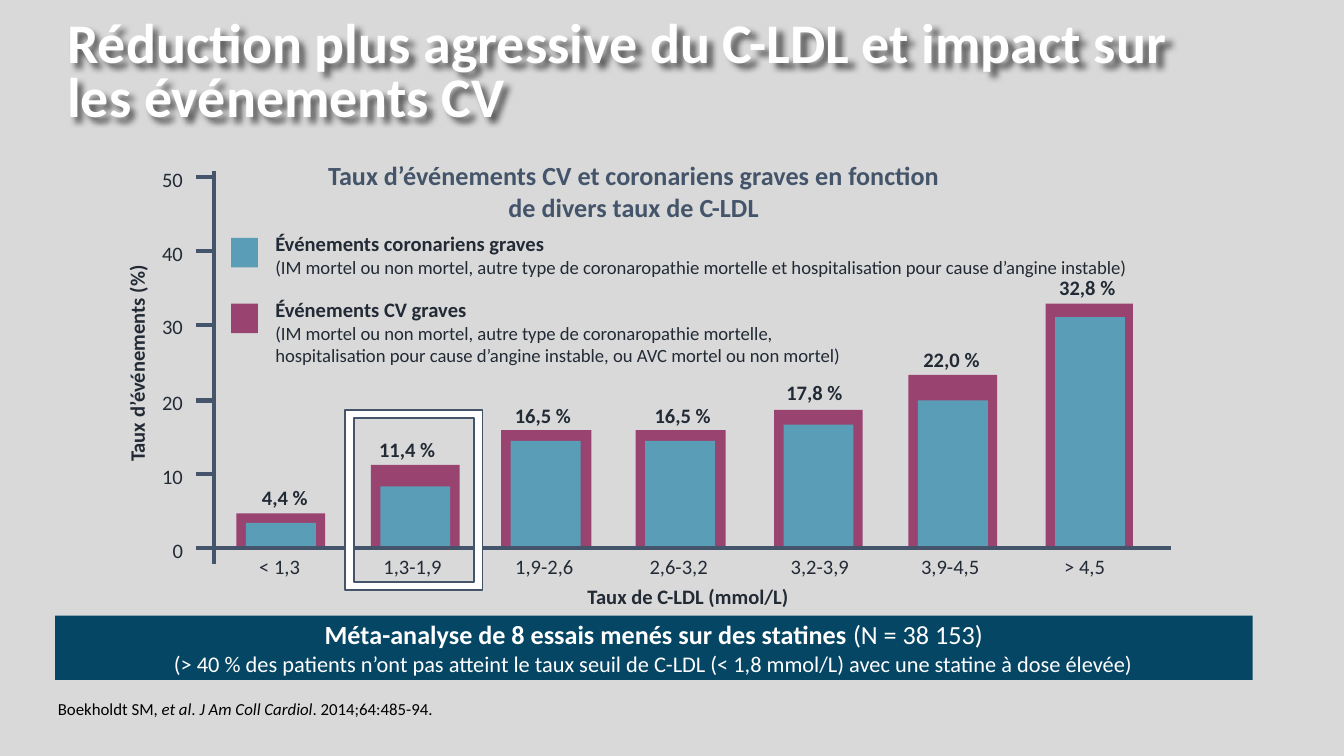
from dataclasses import dataclass

from lxml import etree
from pptx import Presentation, util as u
from pptx.dml.color import RGBColor
from pptx.enum import shapes as es, text as et
from pptx.oxml.ns import qn

PX = 9144  # 100 px to the inch
WIDE = 1000 * PX
TALL = WIDE * 9 // 16
HUE = {
    "back": "D9D9D9", "white": "FFFFFF", "black": "000000", "ink": "222A35",
    "slate": "44546A", "navy": "064665", "plum": "994371", "teal": "5A9DB6",
}
LEFT, MID, RIGHT = et.PP_ALIGN.LEFT, et.PP_ALIGN.CENTER, et.PP_ALIGN.RIGHT
BASE = 408  # y of the zero line
ROW = 29  # height of a one-line label


@dataclass
class Run:
    text: str
    size: int = 11
    bold: bool = False
    italic: bool = False
    hue: str = "ink"


@dataclass
class Bar:
    """One C-LDL class: its bars, value label and axis label."""
    x: int
    wide: int
    tall: int
    inner: int
    value: str
    mid: int
    top: int
    group: str
    center: int


@dataclass
class Key:
    y: int
    wide: int
    tall: int
    hue: str
    name: str
    note: str


BARS = [
    Bar(176, 66, 26, 19, "4,4 %", 212, 356, "< 1,3", 208),
    Bar(276, 66, 62, 46, "11,4 %", 303, 320, "1,3-1,9", 307),
    Bar(373, 67, 88, 80, "16,5 %", 404, 295, "1,9-2,6", 405),
    Bar(473, 67, 88, 80, "16,5 %", 508, 295, "2,6-3,2", 505),
    Bar(576, 66, 103, 92, "17,8 %", 606, 278, "3,2-3,9", 610),
    Bar(676, 66, 129, 110, "22,0 %", 708, 253, "3,9-4,5", 707),
    Bar(778, 65, 182, 172, "32,8 %", 809, 200, "> 4,5", 807),
]
KEYS = [
    Key(216, 452, 62, "plum", "Événements CV graves",
        "(IM mortel ou non mortel, autre type de coronaropathie mortelle, "
        "hospitalisation pour cause d’angine instable, ou AVC mortel ou non mortel)"),
    Key(167, 677, 45, "teal", "Événements coronariens graves",
        "(IM mortel ou non mortel, autre type de coronaropathie mortelle et "
        "hospitalisation pour cause d’angine instable)"),
]


def paint(name: str) -> RGBColor:
    return RGBColor.from_string(HUE[name])


def apply(item, form: dict) -> None:
    for name, value in form.items():
        setattr(item, name, value)


def place(shape, x: int, y: int, w: int, h: int) -> None:
    apply(shape, {"left": x * PX, "top": y * PX, "width": w * PX, "height": h * PX})


def effects(shape):
    """Give the shape its own, empty effect list."""
    return etree.SubElement(shape._element.spPr, qn("a:effectLst"))


def write(shape, paras: list[list[Run]], align=LEFT, space: float = 1.0, **form) -> None:
    frame = shape.text_frame
    apply(frame, {"word_wrap": True, **form})
    for n, runs in enumerate(paras):
        para = frame.add_paragraph() if n else frame.paragraphs[0]
        apply(para, {"alignment": align, "line_spacing": space, "space_before": u.Pt(0)})
        for run in runs:
            part = para.add_run()
            part.text = run.text
            apply(part.font, {"name": "Calibri", "size": u.Pt(run.size),
                              "bold": run.bold, "italic": run.italic})
            part.font.color.rgb = paint(run.hue)


def label(slide, x: int, y: int, w: int, h: int, paras: list[list[Run]],
          align=MID, **form):
    box = slide.shapes.add_textbox(x * PX, y * PX, w * PX, h * PX)
    write(box, paras, align, **{"auto_size": et.MSO_AUTO_SIZE.SHAPE_TO_FIT_TEXT, **form})
    return box


def block(slide, x: int, y: int, w: int, h: int, hue: str,
          kind=es.MSO_SHAPE.RECTANGLE):
    shape = slide.shapes.add_shape(kind, x * PX, y * PX, w * PX, h * PX)
    shape.shadow.inherit = False
    shape.fill.solid()
    shape.fill.fore_color.rgb = paint(hue)
    shape.line.fill.background()
    return shape


def rule(slide, x: int, y: int, to_x: int, to_y: int) -> None:
    line = slide.shapes.add_connector(
        es.MSO_CONNECTOR.STRAIGHT, x * PX, y * PX, to_x * PX, to_y * PX)
    line.line.color.rgb = paint("slate")
    line.line.width = u.Pt(2.25)
    effects(line)


def head(slide) -> None:
    title = slide.shapes.title
    place(title, 49, 24, 872, 63)
    write(title, [[Run("Réduction plus agressive du C-LDL et impact sur les événements CV",
                       30, True, hue="white")]],
          space=0.8, margin_left=PX, margin_right=0,
          vertical_anchor=et.MSO_ANCHOR.MIDDLE, auto_size=et.MSO_AUTO_SIZE.NONE)
    shade = etree.SubElement(effects(title), qn("a:outerShdw"), blurRad="38100",
                             dist="38100", dir="2700000", algn="tl", rotWithShape="0")
    tone = etree.SubElement(shade, qn("a:srgbClr"), val=HUE["black"])
    etree.SubElement(tone, qn("a:alpha"), val="60000")


def foot(slide) -> None:
    cite = [Run("Boekholdt SM, "), Run("et al", italic=True), Run(". "),
            Run("J Am Coll Cardiol", italic=True), Run(". 2014;64:485-94.")]
    for run in cite:
        apply(run, {"size": 9, "hue": "black"})
    label(slide, 43, 514, 351, 29, [cite], LEFT, space=0.9, margin_left=0, margin_right=0,
          vertical_anchor=et.MSO_ANCHOR.MIDDLE, auto_size=et.MSO_AUTO_SIZE.NONE)

    band = block(slide, 41, 458, 891, 48, "navy")
    edges = {f"margin_{side}": 2 * PX for side in ("left", "right", "top", "bottom")}
    write(band, [
        [Run("Méta-analyse de 8 essais menés sur des statines ", 14, True, hue="white"),
         Run("(N = 38 153)", 14, hue="white")],
        [Run("(> 40 % des patients n’ont pas atteint le taux seuil de C-LDL "
             "(< 1,8 mmol/L) avec une statine à dose élevée)", 12, hue="white")],
    ], MID, vertical_anchor=et.MSO_ANCHOR.MIDDLE, **edges)


def scale(slide) -> None:
    """Draw the vertical axis with its ticks, numbers and name."""
    rule(slide, 159, 127, 159, 420)
    for n in range(6):
        tick = round(BASE - n * 55.2)
        rule(slide, 146, tick, 159, tick)
        label(slide, 106, round(395 - n * 55.2), 40, ROW, [[Run(str(n * 10))]], RIGHT)
    name = label(slide, -36, 256, 276, ROW, [[Run("Taux d’événements (%)", bold=True)]])
    name.rotation = 270


def legend(slide) -> None:
    for key in KEYS:
        block(slide, 172, key.y + 10, 20, 22, key.hue)
        label(slide, 195, key.y, key.wide, key.tall,
              [[Run(key.name, bold=True)], [Run(key.note, 10)]], LEFT)
    label(slide, 224, 114, 495, 57, [[Run(
        "Taux d’événements CV et coronariens graves en fonction de divers taux de C-LDL",
        14, True, hue="slate")]])


def plot(slide) -> None:
    for bar in BARS:
        block(slide, bar.x, BASE - bar.tall, bar.wide, bar.tall, "plum")
        block(slide, bar.x + 7, BASE - bar.inner, 52, bar.inner, "teal")
    rule(slide, 154, BASE, 871, BASE)
    for bar in BARS:
        label(slide, bar.center - 41, 407, 82, ROW, [[Run(bar.group)]])
        label(slide, bar.mid - 37, bar.top, 74, ROW, [[Run(bar.value, bold=True)]])
    label(slide, 350, 434, 324, 19, [[Run("Taux de C-LDL (mmol/L)", bold=True)]],
          vertical_anchor=et.MSO_ANCHOR.MIDDLE, margin_left=0, margin_right=0,
          margin_top=0, margin_bottom=0)
    focus = block(slide, 257, 305, 102, 134, "white", es.MSO_SHAPE.FRAME)
    focus.adjustments[0] = 0.06
    focus.line.color.rgb = paint("slate")
    focus.line.width = u.Pt(1)


def main() -> None:
    deck = Presentation()
    apply(deck, {"slide_width": WIDE, "slide_height": TALL})
    slide = deck.slides.add_slide(deck.slide_layouts[5])
    fill = slide.background.fill
    fill.solid()
    fill.fore_color.rgb = paint("back")
    for draw in (head, foot, scale, legend, plot):
        draw(slide)
    deck.save("out.pptx")


if __name__ == "__main__":
    main()
